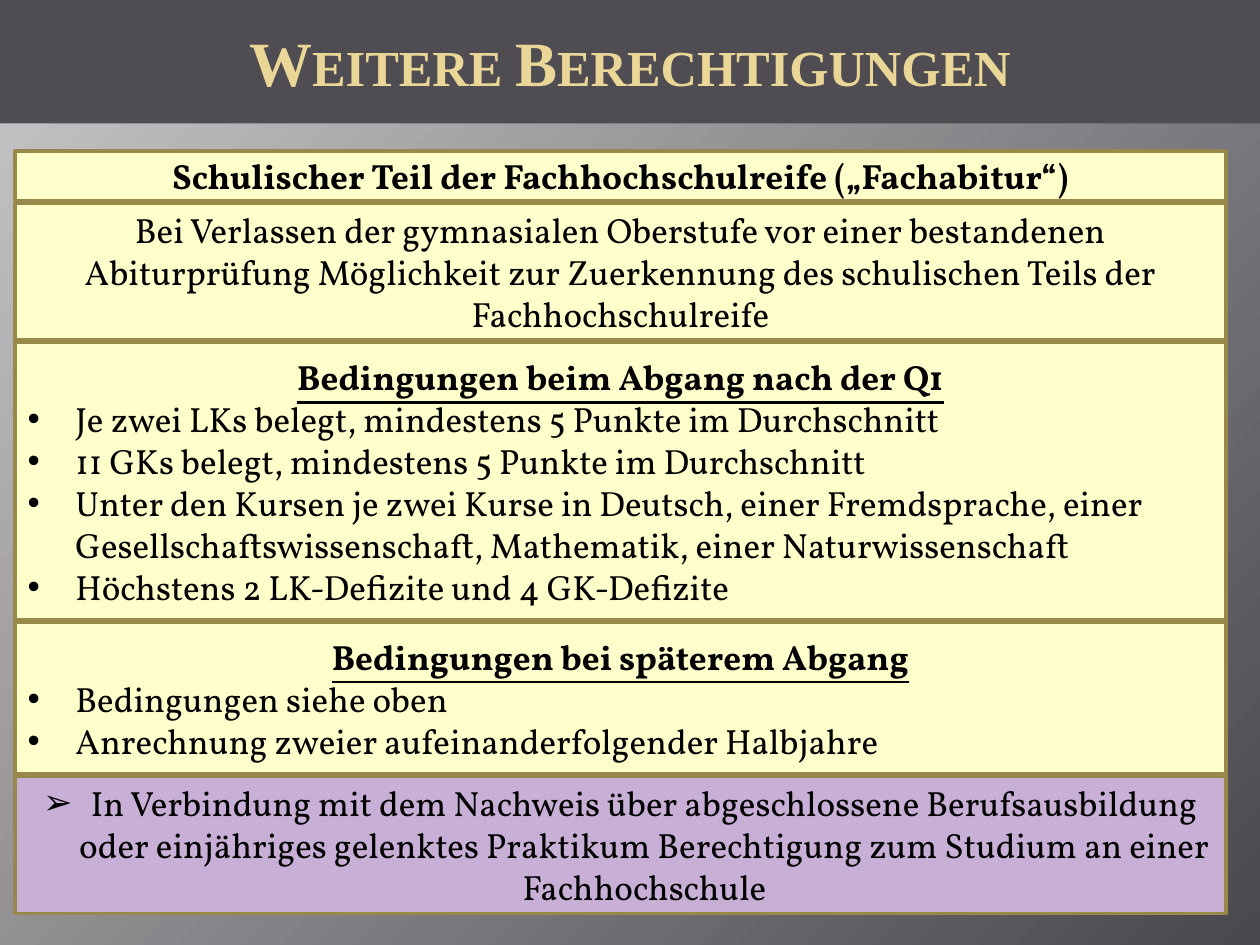
from lxml.etree import SubElement
from pptx import Presentation
from pptx.dml.color import RGBColor
from pptx.enum.shapes import MSO_SHAPE
from pptx.enum.text import MSO_ANCHOR, MSO_AUTO_SIZE, PP_ALIGN
from pptx.oxml.ns import qn
from pptx.util import Inches, Pt

BLACK = RGBColor(0x00, 0x00, 0x00)
GOLD = RGBColor(0xEA, 0xD6, 0x96)
SLATE = RGBColor(0x4F, 0x4D, 0x52)
CREAM = RGBColor(0xFF, 0xFF, 0xCC)
LILAC = RGBColor(0xC8, 0xAF, 0xD6)
OLIVE = RGBColor(0x98, 0x89, 0x4B)
LIGHT = RGBColor(0xC7, 0xC6, 0xC8)
DARK = RGBColor(0x4A, 0x48, 0x4D)

BODY = {"name": "Vollkorn", "size": Pt(20), "bold": False}
HEAD = {**BODY, "bold": True, "underline": True}
TITLE = {"name": "Times New Roman", "size": Pt(36), "bold": True}

LEFT, TOP, WIDTH, GAP = 0.12, 1.2, 9.61, 0.02
ROWS = [
    (0.39, CREAM, [("head", "Schulischer Teil der Fachhochschulreife („Fachabitur“)")]),
    (1.09, CREAM, [("text", "Bei Verlassen der gymnasialen Oberstufe vor einer bestandenen "
                    "Abiturprüfung Möglichkeit zur Zuerkennung des schulischen Teils der "
                    "Fachhochschulreife")]),
    (2.2, CREAM, [
        ("head", "Bedingungen beim Abgang nach der Q1"),
        ("item", "Je zwei LKs belegt, mindestens 5 Punkte im Durchschnitt"),
        ("item", "11 GKs belegt, mindestens 5 Punkte im Durchschnitt"),
        ("item", "Unter den Kursen je zwei Kurse in Deutsch, einer Fremdsprache, einer "
         "Gesellschaftswissenschaft, Mathematik, einer Naturwissenschaft"),
        ("item", "Höchstens 2 LK-Defizite und 4 GK-Defizite"),
    ]),
    (1.2, CREAM, [
        ("head", "Bedingungen bei späterem Abgang"),
        ("item", "Bedingungen siehe oben"),
        ("item", "Anrechnung zweier aufeinanderfolgender Halbjahre"),
    ]),
    (1.09, LILAC, [("arrow", "In Verbindung mit dem Nachweis über abgeschlossene "
                    "Berufsausbildung oder einjähriges gelenktes Praktikum Berechtigung "
                    "zum Studium an einer Fachhochschule")]),
]
KINDS = {
    "head": (HEAD, PP_ALIGN.CENTER, None),
    "text": (BODY, PP_ALIGN.CENTER, None),
    "item": (BODY, PP_ALIGN.LEFT, "•"),
    "arrow": (BODY, PP_ALIGN.CENTER, "➢"),
}


def apply(target, values):
    for name, value in values.items():
        setattr(target, name, value)


class Page:
    line = Pt(2)
    indent = Inches(0.38)

    def __init__(self, deck):
        self.slide = deck.slides.add_slide(deck.slide_layouts[5])

    def back(self):
        fill = self.slide.background.fill
        fill.gradient()
        for stop, color in zip(fill.gradient_stops, (LIGHT, DARK)):
            stop.color.rgb = color
        lin = next(self.slide.element.iter(qn("a:lin")))
        grad = lin.getparent()
        grad.remove(lin)
        round_fill = SubElement(grad, qn("a:path"))
        round_fill.set("path", "circle")
        SubElement(round_fill, qn("a:fillToRect"), r="100000", b="100000")

    def title(self, text):
        shape = self.slide.shapes.title
        apply(shape, {"left": 0, "top": 0, "width": Inches(10), "height": Inches(0.98)})
        shape.fill.solid()
        shape.fill.fore_color.rgb = SLATE
        frame = shape.text_frame
        apply(frame, {
            "margin_left": Inches(0.05), "margin_right": Inches(0.05),
            "margin_top": 0, "margin_bottom": 0, "word_wrap": True,
            "auto_size": MSO_AUTO_SIZE.NONE, "vertical_anchor": MSO_ANCHOR.MIDDLE,
        })
        run = self.text(frame.paragraphs[0], text, TITLE, PP_ALIGN.CENTER, GOLD)
        run.font._element.set("cap", "small")

    def box(self, top, height, color, lines):
        shape = self.slide.shapes.add_shape(
            MSO_SHAPE.RECTANGLE, Inches(LEFT), Inches(top), Inches(WIDTH), Inches(height))
        shape.shadow.inherit = False
        shape.fill.solid()
        shape.fill.fore_color.rgb = color
        shape.line.color.rgb = OLIVE
        shape.line.width = self.line
        frame = shape.text_frame
        apply(frame, {"word_wrap": True, "vertical_anchor": MSO_ANCHOR.MIDDLE})
        for row, (kind, text) in enumerate(lines):
            para = frame.add_paragraph() if row else frame.paragraphs[0]
            style, align, mark = KINDS[kind]
            self.text(para, text, style, align, BLACK)
            if mark:
                self.bullet(para, mark)

    def text(self, para, words, style, align, color):
        para.alignment = align
        run = para.add_run()
        run.text = words
        apply(run.font, style)
        run.font.color.rgb = color
        return run

    def bullet(self, para, mark):
        props = para._p.get_or_add_pPr()
        props.set("marL", str(self.indent))
        props.set("indent", str(-self.indent))
        SubElement(props, qn("a:buFont"), typeface="Arial")
        SubElement(props, qn("a:buChar"), char=mark)


def main():
    deck = Presentation()
    apply(deck, {"slide_width": Inches(10), "slide_height": Inches(7.5)})
    page = Page(deck)
    page.back()
    page.title("Weitere Berechtigungen")
    top = TOP
    for height, color, lines in ROWS:
        page.box(top, height, color, lines)
        top += height + GAP
    deck.save("out.pptx")


if __name__ == "__main__":
    main()
